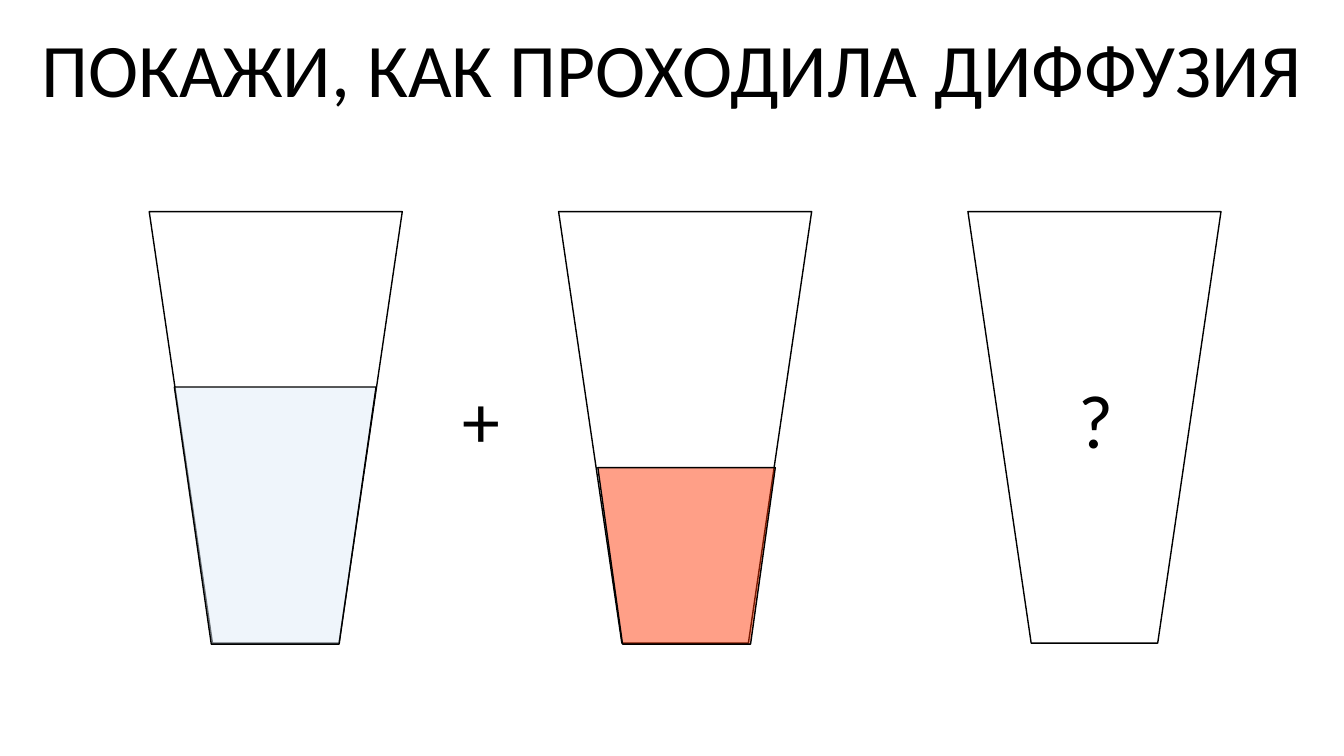
from lxml import etree
from pptx import Presentation
from pptx.dml.color import RGBColor
from pptx.enum.shapes import MSO_SHAPE
from pptx.enum.text import MSO_ANCHOR, MSO_AUTO_SIZE, PP_ALIGN
from pptx.oxml.ns import qn
from pptx.util import Inches, Pt

TRAPEZOID = MSO_SHAPE.TRAPEZOID
BOTTOM = MSO_ANCHOR.BOTTOM
CENTER = PP_ALIGN.CENTER
NO_AUTOFIT = MSO_AUTO_SIZE.NONE
TITLE_ONLY = 5

COLORS = {"ink": "000000", "glass": "FFFFFF", "water": "DEEBF7", "dye": "FF3300"}
GLASS_LEFT, GLASS_STEP, GLASS_TOP = 1.48, 4.06, 2.1
GLASS_WIDTH, GLASS_HEIGHT = 2.51, 4.28


def color(name):
    return RGBColor.from_string(COLORS[name])


def set_text(box, text, spacing):
    frame = box.text_frame
    frame.text = text
    frame.word_wrap = True
    frame.auto_size = NO_AUTOFIT
    frame.vertical_anchor = BOTTOM
    para = frame.paragraphs[0]
    para.alignment = CENTER
    para.line_spacing = spacing
    para.space_before = Pt(0)
    para.font.name = "Calibri"
    para.font.size = Pt(54)
    para.font.color.rgb = color("ink")


def add_title(page, text):
    title = page.shapes.title
    title.left, title.top = Inches(0.2), Inches(0.29)
    title.width, title.height = Inches(12.93), Inches(0.89)
    set_text(title, text, 0.9)


def add_sign(page, text, left):
    box = page.shapes.add_textbox(Inches(left), Inches(3.75), Inches(1.36), Inches(0.89))
    set_text(box, text, 0.8)


def add_vessel(page, left, top, width, height, fill, taper=0.25, opacity=100):
    """Add an outlined trapezoid with its wide side up; opacity is in percent."""
    vessel = page.shapes.add_shape(
        TRAPEZOID, Inches(left), Inches(top), Inches(width), Inches(height))
    vessel.shadow.inherit = False
    vessel.adjustments[0] = taper
    vessel._element.spPr.xfrm.set("flipV", "1")
    vessel.fill.solid()
    vessel.fill.fore_color.rgb = color(fill)
    if opacity < 100:
        shade = vessel._element.spPr.find(qn("a:solidFill")).find(qn("a:srgbClr"))
        etree.SubElement(shade, qn("a:alpha")).set("val", str(opacity * 1000))
    vessel.line.color.rgb = color("ink")
    vessel.line.width = Pt(1)


def main():
    deck = Presentation()
    deck.slide_width, deck.slide_height = Inches(13.33), Inches(7.5)
    page = deck.slides.add_slide(deck.slide_layouts[TITLE_ONLY])

    add_title(page, "ПОКАЖИ, КАК ПРОХОДИЛА ДИФФУЗИЯ")
    for index in range(3):
        add_vessel(page, GLASS_LEFT + index * GLASS_STEP, GLASS_TOP,
                   GLASS_WIDTH, GLASS_HEIGHT, "glass")
    add_vessel(page, 1.73, 3.84, 2, 2.55, "water", taper=0.183, opacity=48)
    add_vessel(page, 5.93, 4.64, 1.76, 1.75, "dye", taper=0.14, opacity=47)
    add_sign(page, "+", 4.09)
    add_sign(page, "?", 10.19)

    deck.save("out.pptx")


if __name__ == "__main__":
    main()
